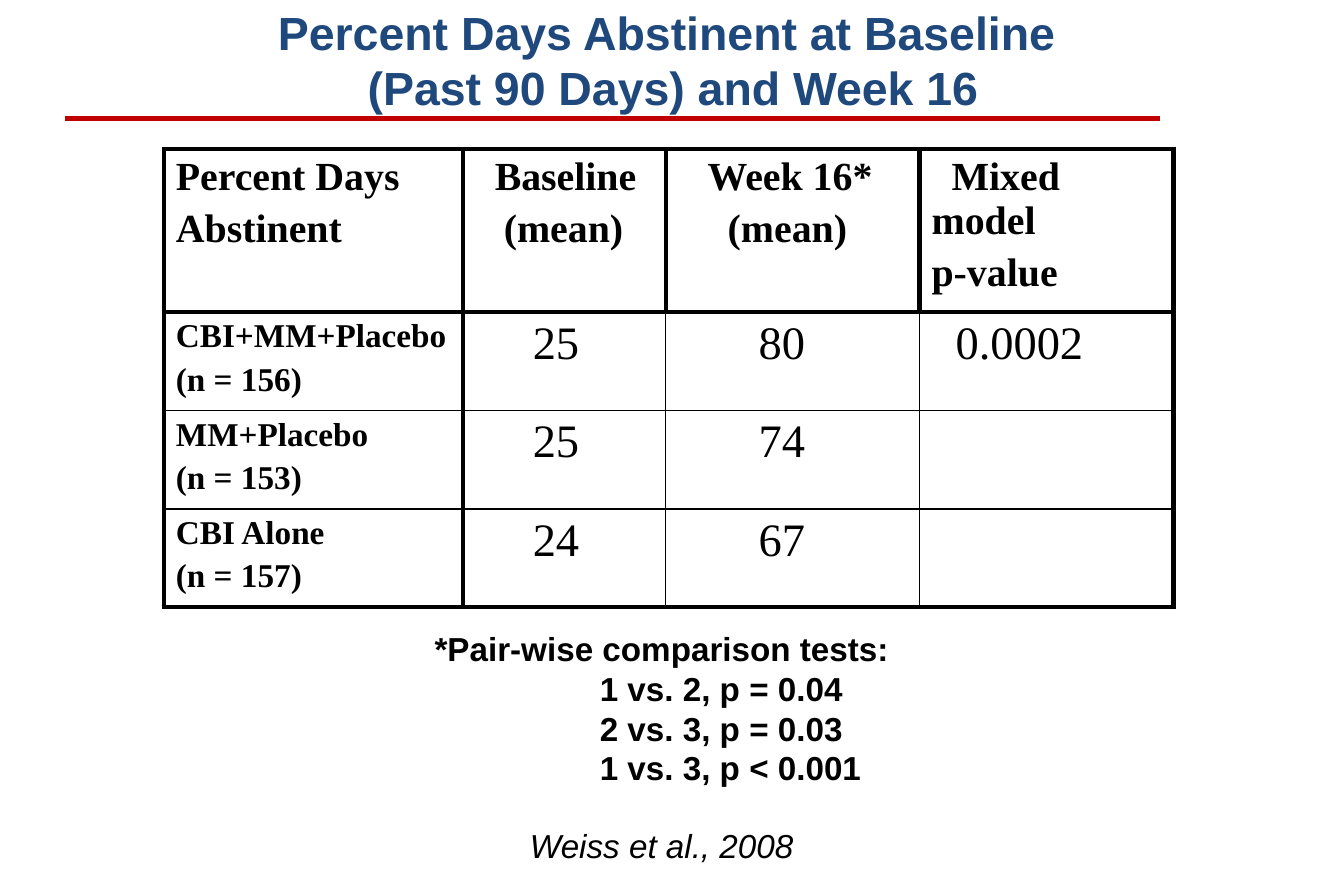
from lxml import etree
from pptx import Presentation
from pptx import util as u
from pptx.dml.color import RGBColor
from pptx.enum import shapes, text
from pptx.oxml import ns

NAVY = RGBColor(0x1F, 0x49, 0x7D)
RED = RGBColor(0xC0, 0x00, 0x00)
BLACK = RGBColor(0, 0, 0)
SANS, SERIF = "Arial", "Times New Roman"

TITLE = "Percent Days Abstinent at Baseline \v(Past 90 Days) and Week 16"

# Each cell is a list of (line, first-line indent in px).
ROWS = [
    [[("Percent Days", 0), ("Abstinent", 0)],
     [("Baseline", 20), ("(mean)", 29)],
     [("Week 16*", 30), ("(mean)", 50)],
     [("Mixed model", 20), ("p-value", 0)]],
    [[("CBI+MM+Placebo", 0), ("(n = 156)", 0)], [("25", 58)], [("80", 81)], [("0.0002", 24)]],
    [[("MM+Placebo", 0), ("(n = 153)", 0)], [("25", 58)], [("74", 81)], []],
    [[("CBI Alone", 0), ("(n = 157)", 0)], [("24", 58)], [("67", 81)], []],
]
COL_WIDTHS = [299, 203, 254, 254]
ROW_HEIGHTS = [152, 92, 92, 92]

TESTS_HEADING = "*Pair-wise comparison tests:"
TESTS = ["1 vs. 2, p = 0.04", "2 vs. 3, p = 0.03", "1 vs. 3, p < 0.001"]
CITATION = "Weiss et al., 2008"
TESTS_INDENT = 446


def px(n):
    return u.Emu(round(n * 914400 / 119.5))


def style(p, size, font, color=BLACK, bold=False, italic=False):
    for r in p.runs:
        f = r.font
        f.size, f.name, f.bold, f.italic = u.Pt(size), font, bold, italic
        f.color.rgb = color


def add_text_box(slide, x, y, w, h):
    tf = slide.shapes.add_textbox(px(x), px(y), px(w), px(h)).text_frame
    tf.word_wrap = True
    tf.vertical_anchor = text.MSO_ANCHOR.MIDDLE
    tf.margin_top = tf.margin_bottom = tf.margin_left = tf.margin_right = 0
    return tf


def paragraphs(tf, lines):
    """Fill a text frame with one paragraph per line and return them."""
    tf.text = "\n".join(lines)
    return tf.paragraphs


def set_borders(cell, row, col):
    """Thick frame, header row and first column; thin lines elsewhere."""
    head, last_row, last_col = row == 0, len(ROWS) - 1, len(COL_WIDTHS) - 1
    thick = {
        "lnL": head or col <= 1,
        "lnR": head or col in (0, last_col),
        "lnT": row <= 1,
        "lnB": row in (0, last_row),
    }
    tcPr = cell._tc.get_or_add_tcPr()
    for i, (tag, is_thick) in enumerate(thick.items()):
        ln = etree.Element(ns.qn("a:" + tag), w=str(u.Pt(3 if is_thick else 1)))
        fill = etree.SubElement(ln, ns.qn("a:solidFill"))
        etree.SubElement(fill, ns.qn("a:srgbClr"), val=str(BLACK))
        tcPr.insert(i, ln)


def add_results_table(slide):
    table = slide.shapes.add_table(
        len(ROWS), len(COL_WIDTHS), px(164), px(149),
        px(sum(COL_WIDTHS)), px(sum(ROW_HEIGHTS))).table
    table.first_row = table.horz_banding = False
    for column, width in zip(table.columns, COL_WIDTHS):
        column.width = px(width)
    for row, height in zip(table.rows, ROW_HEIGHTS):
        row.height = px(height)
    for r, row in enumerate(ROWS):
        for c, lines in enumerate(row):
            cell = table.cell(r, c)
            cell.fill.background()
            set_borders(cell, r, c)
            size = 24 if r == 0 else 20 if c == 0 else 28
            cell_paragraphs = paragraphs(cell.text_frame, [line for line, _ in lines])
            for p, (_, indent) in zip(cell_paragraphs, lines):
                p.space_before = u.Pt(size * 0.2)
                p._p.get_or_add_pPr().set("indent", str(px(indent)))
                style(p, size, SERIF, bold=r == 0 or c == 0)


def main():
    prs = Presentation()
    prs.slide_width, prs.slide_height = u.Inches(11.25), u.Inches(7.5)
    slide = prs.slides.add_slide(prs.slide_layouts[6])

    p = add_text_box(slide, 165, 0, 1016, 119).paragraphs[0]
    p.text = TITLE
    p.alignment = text.PP_ALIGN.CENTER
    style(p, 28, SANS, NAVY, bold=True)

    add_results_table(slide)

    tf = add_text_box(slide, 154, 628, 1016, 238)
    heading, *tests, citation = paragraphs(tf, [TESTS_HEADING, *TESTS, CITATION])
    for p in (heading, citation):
        p.alignment = text.PP_ALIGN.CENTER
    for p in tests:
        p._p.get_or_add_pPr().set("marL", str(px(TESTS_INDENT)))
    for p in (heading, *tests):
        style(p, 20, SANS, bold=True)
    citation.space_before = u.Pt(23)
    style(citation, 20, SANS, italic=True)

    rule = slide.shapes.add_connector(
        shapes.MSO_CONNECTOR.STRAIGHT, px(65), px(119), px(1160), px(119))
    rule.line.color.rgb = RED
    rule.line.width = u.Pt(3)
    etree.SubElement(rule._element.spPr, ns.qn("a:effectLst"))

    prs.save("out.pptx")


if __name__ == "__main__":
    main()
